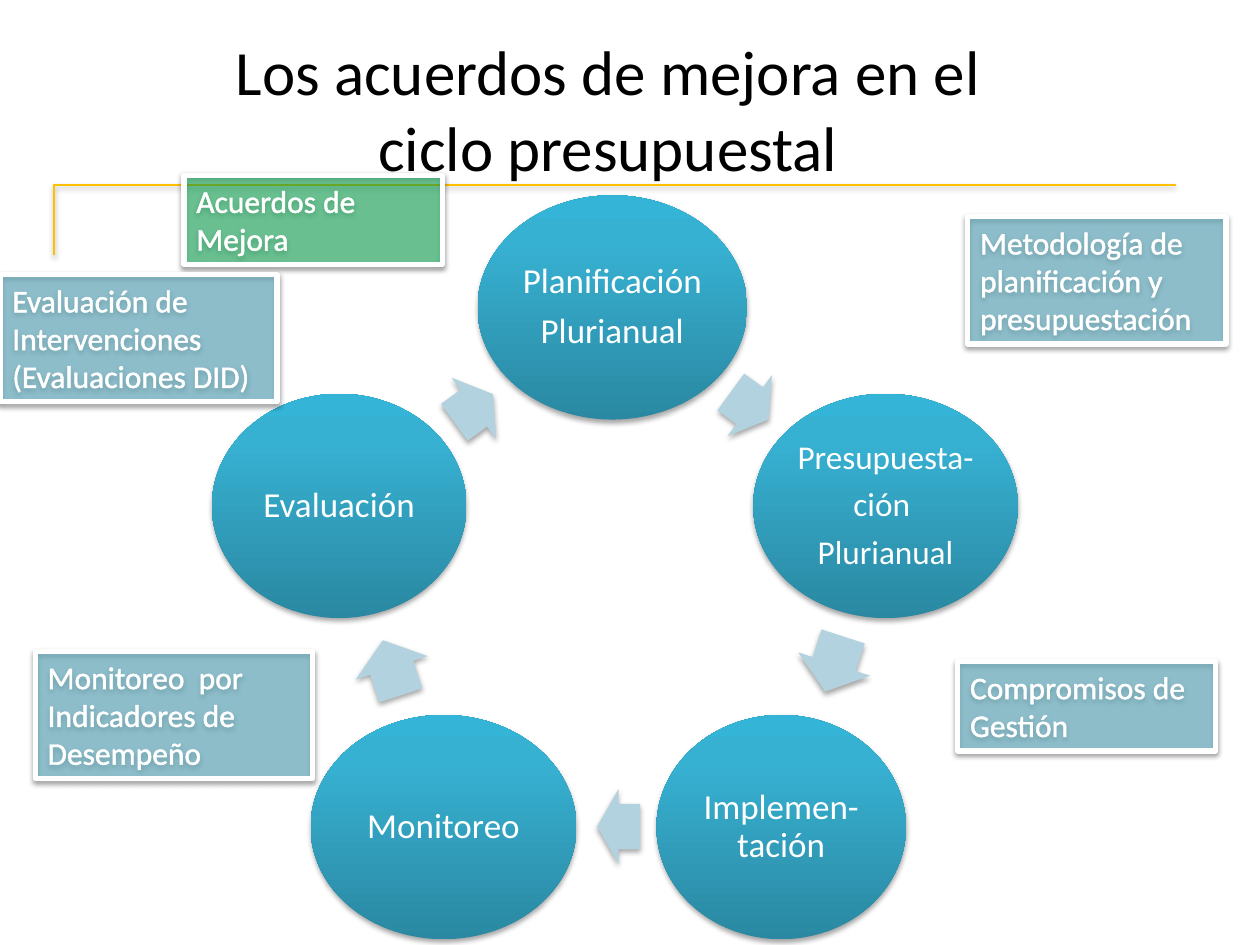
"""Build the slide on improvement agreements in the budget cycle."""
from copy import deepcopy
from math import cos, radians, sin

from lxml import etree
from pptx import Presentation
from pptx import util as u
from pptx.dml.color import RGBColor
from pptx.enum import shapes, text
from pptx.oxml.ns import qn

FONT = "Calibri"
BLACK = RGBColor(0, 0, 0)
WHITE = RGBColor(255, 255, 255)
GOLD = RGBColor(0xFF, 0xC0, 0x00)
TEAL = RGBColor(0x4B, 0xAC, 0xC6)
GREEN = RGBColor(0x00, 0xB0, 0x50)
PALE = RGBColor(0xB2, 0xD2, 0xDF)
GRADIENT = [
    (0, RGBColor(0x2A, 0x88, 0xA2)),
    (0.8, RGBColor(0x37, 0xB1, 0xD2)),
    (1, RGBColor(0x34, 0xB4, 0xD6)),
]

TITLE = "Los acuerdos de mejora en el ciclo presupuestal"
RING_X, RING_Y, RING_RADIUS = 4.86, 4.72, 2.28
STAGE_HEIGHT, ARROW_HEIGHT = 1.78, 0.6
STAGES = [
    (["Planificación", "Plurianual"], 2.14, 20),
    (["Presupuesta-", "ción ", "Plurianual"], 2.1, 19),
    (["Implemen-tación"], 1.98, 20),
    (["Monitoreo"], 2.11, 20),
    (["Evaluación"], 2.02, 20),
]
ARROWS = [
    (5.95, 3.22, 0.37),
    (6.62, 5.27, 0.46),
    (4.91, 6.56, 0.34),
    (3.11, 5.3, 0.46),
    (3.76, 3.24, 0.38),
]
TOOLS = [
    ("Metodología de planificación y presupuestación", 7.68, 1.72, 2.05, 1.01, TEAL),
    ("Compromisos de Gestión", 7.6, 5.25, 2.05, 0.71, TEAL),
    ("Acuerdos de Mejora", 1.46, 1.39, 2.05, 0.71, GREEN),
    ("Monitoreo  por Indicadores de Desempeño", 0.28, 5.17, 2.2, 1.01, TEAL),
    ("Evaluación de Intervenciones (Evaluaciones DID)", 0, 2.18, 2.2, 1.01, TEAL),
]


def add_child(parent, tag, **attributes):
    return etree.SubElement(parent, qn(tag), {k: str(v) for k, v in attributes.items()})


def set_shadow(shape, distance, opacity):
    shape.shadow.inherit = False
    effects = shape._element.spPr.find(qn("a:effectLst"))
    shadow = add_child(effects, "a:outerShdw", blurRad=u.Pt(3.1), dist=u.Pt(distance),
                       dir=5400000, rotWithShape=0)
    color = add_child(shadow, "a:srgbClr", val=BLACK)
    add_child(color, "a:alpha", val=opacity * 1000)


def add_shape(page, kind, left, top, width, height):
    return page.shapes.add_shape(kind, *map(u.Inches, (left, top, width, height)))


def style(para, size, color, align):
    para.alignment = align
    para.font.name = FONT
    para.font.size = u.Pt(size)
    para.font.color.rgb = color


def fill_gradient(shape):
    shape.fill.gradient()
    shape.fill.gradient_angle = 90
    stop_list = shape._element.spPr.find(".//" + qn("a:gsLst"))
    stop_list.append(deepcopy(stop_list[-1]))
    for stop, (position, color) in zip(shape.fill.gradient_stops, GRADIENT):
        stop.position = position
        stop.color.rgb = color


def add_rule(page):
    builder = page.shapes.build_freeform(u.Inches(0.43), u.Inches(2.02))
    corners = [(0.43, 1.47), (9.33, 1.47)]
    builder.add_line_segments([(u.Inches(x), u.Inches(y)) for x, y in corners], close=False)
    rule = builder.convert_to_shape()
    rule.fill.background()
    rule.line.color.rgb = GOLD
    rule.line.width = u.Pt(1)
    set_shadow(rule, 1.6, 38)


def add_stage(page, index, lines, width, size):
    angle = radians(72 * index)
    center_x = RING_X + RING_RADIUS * sin(angle)
    center_y = RING_Y - RING_RADIUS * cos(angle)
    stage = add_shape(page, shapes.MSO_SHAPE.OVAL, center_x - width / 2,
                      center_y - STAGE_HEIGHT / 2, width, STAGE_HEIGHT)
    fill_gradient(stage)
    stage.line.fill.background()
    set_shadow(stage, 1.8, 35)
    frame = stage.text_frame
    frame.margin_left = frame.margin_right = u.Inches(0.03)
    frame.margin_top = frame.margin_bottom = u.Inches(0.03)
    frame.text = "\n".join(lines)
    for para in frame.paragraphs:
        style(para, size, WHITE, text.PP_ALIGN.CENTER)
        para.line_spacing = 0.9
        para.space_after = u.Pt(size * 0.35)


def add_arrow(page, index, center_x, center_y, width):
    arrow = add_shape(page, shapes.MSO_SHAPE.RIGHT_ARROW, center_x - width / 2,
                      center_y - ARROW_HEIGHT / 2, width, ARROW_HEIGHT)
    arrow.adjustments[0] = 0.6
    arrow.adjustments[1] = 0.5
    arrow.rotation = 36 + 72 * index
    arrow.fill.solid()
    arrow.fill.fore_color.rgb = PALE
    arrow.line.fill.background()
    set_shadow(arrow, 1.8, 35)


def add_title(page):
    box = page.shapes.add_textbox(*map(u.Inches, (1.61, 0.21, 6.43, 0.92)))
    box.text_frame.word_wrap = True
    box.text_frame.text = TITLE
    style(box.text_frame.paragraphs[0], 36, BLACK, text.PP_ALIGN.CENTER)


def add_tool(page, label, left, top, width, height, color):
    box = add_shape(page, shapes.MSO_SHAPE.RECTANGLE, left, top, width, height)
    box.fill.solid()
    box.fill.fore_color.rgb = color
    add_child(box._element.spPr.find(".//" + qn("a:srgbClr")), "a:alpha", val=49000)
    box.line.color.rgb = WHITE
    box.line.width = u.Pt(3)
    set_shadow(box, 1.6, 38)
    frame = box.text_frame
    frame.vertical_anchor = text.MSO_ANCHOR.TOP
    frame.auto_size = text.MSO_AUTO_SIZE.SHAPE_TO_FIT_TEXT
    frame.text = label
    para = frame.paragraphs[0]
    style(para, 18, WHITE, text.PP_ALIGN.LEFT)
    outline = add_child(para.runs[0]._r.get_or_add_rPr(), "a:ln", w=u.Pt(1.45))
    add_child(add_child(outline, "a:solidFill"), "a:srgbClr", val=WHITE)


def main():
    deck = Presentation()
    deck.slide_width, deck.slide_height = u.Inches(10), u.Inches(7.5)
    page = deck.slides.add_slide(deck.slide_layouts[6])
    add_rule(page)
    for index, (stage, arrow) in enumerate(zip(STAGES, ARROWS)):
        add_stage(page, index, *stage)
        add_arrow(page, index, *arrow)
    add_title(page)
    for tool in TOOLS:
        add_tool(page, *tool)
    deck.save("out.pptx")


if __name__ == "__main__":
    main()
